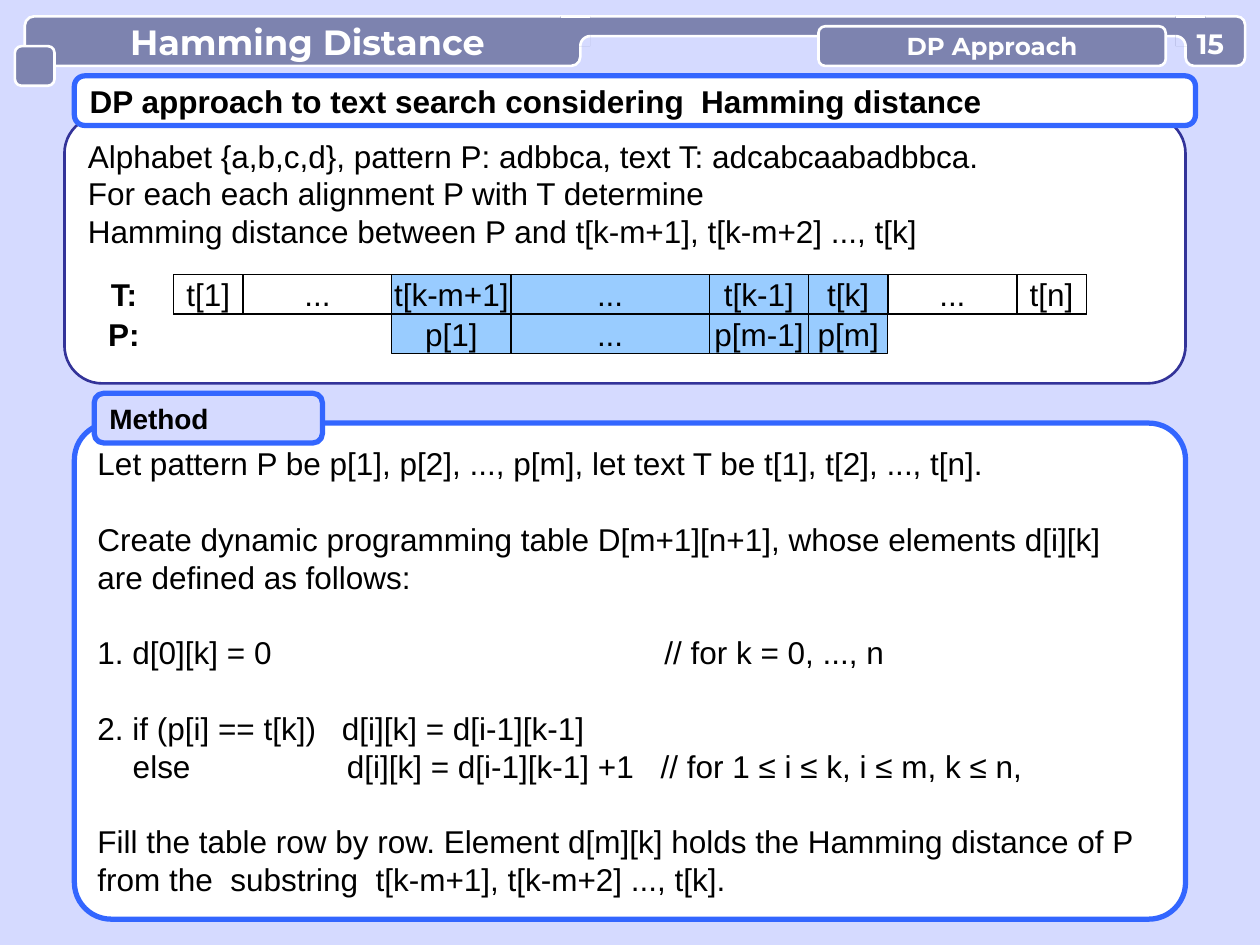
from math import cos, pi, sin

from lxml import etree
from pptx import Presentation
from pptx.dml.color import RGBColor
from pptx.enum.shapes import MSO_CONNECTOR, MSO_SHAPE
from pptx.enum.text import MSO_ANCHOR, PP_ALIGN
from pptx.oxml.ns import qn
from pptx.util import Inches, Mm, Pt

RECT, ROUND = MSO_SHAPE.RECTANGLE, MSO_SHAPE.ROUNDED_RECTANGLE
STRAIGHT = MSO_CONNECTOR.STRAIGHT
LEFT, CENTER = PP_ALIGN.LEFT, PP_ALIGN.CENTER
TOP, MIDDLE = MSO_ANCHOR.TOP, MSO_ANCHOR.MIDDLE

COLORS = {
    "bg": "D5DAFF", "bar": "7D83AF", "white": "FFFFFF", "black": "000000",
    "blue": "3366FF", "navy": "333399", "cell": "99CCFF",
}
LEADING = Pt(21.6)
ROW_OFFSET = 0.3  # the grid has 1 mm steps and starts a little below the top edge


class Deck:
    """Style and current slide; boxes are (column, row, columns, rows)."""

    body, heading = "Arial", "Montserrat"

    def __init__(self):
        self.prs = Presentation()
        self.prs.slide_width, self.prs.slide_height = Inches(10), Inches(7.5)
        self.s = self.prs.slides.add_slide(self.prs.slide_layouts[6])
        self.paint(self.s.background.fill, "bg")

    def paint(self, fill, color):
        if color:
            fill.solid()
            fill.fore_color.rgb = RGBColor.from_string(COLORS[color])
        else:
            fill.background()

    def dress(self, sp, fill, line, width):
        sp.shadow.inherit = False
        self.paint(sp.fill, fill)
        self.paint(sp.line.fill, line)
        if line:
            sp.line.width = Pt(width)

    def place(self, box):
        x, y, w, h = box
        return Mm(x), Mm(y + ROW_OFFSET), Mm(w), Mm(h)

    def shape(self, box, fill=None, line=None, width=1.5, adj=None):
        sp = self.s.shapes.add_shape(RECT if adj is None else ROUND, *self.place(box))
        if adj is not None:
            sp.adjustments[0] = adj
        self.dress(sp, fill, line, width)
        return sp

    def textbox(self, box, text, **style):
        self.put_text(self.s.shapes.add_textbox(*self.place(box)), [text], inset=0, **style)

    def put_text(self, sp, lines, size=18, font=body, color="black", bold=False,
                 align=LEFT, anchor=MIDDLE, inset=None, top=None):
        tf = sp.text_frame
        tf.text = "\n".join(lines)
        tf.word_wrap = True
        tf.vertical_anchor = anchor
        if inset is not None:
            tf.margin_left = tf.margin_right = tf.margin_top = tf.margin_bottom = inset
        if top is not None:
            tf.margin_top = Inches(top)
        for p in tf.paragraphs:
            p.alignment = align
            for r in p.runs:
                r.font.size, r.font.name, r.font.bold = Pt(size), font, bold
                r.font.color.rgb = RGBColor.from_string(COLORS[color])
        return tf

    def tabs(self, p, stops):
        tab_list = etree.SubElement(p._p.get_or_add_pPr(), qn("a:tabLst"))
        for stop in stops:
            etree.SubElement(tab_list, qn("a:tab"), pos=str(Inches(stop)), algn="l")

    def line(self, x1, x2, y):
        y = Mm(y + ROW_OFFSET)
        c = self.s.shapes.add_connector(STRAIGHT, Mm(x1), y, Mm(x2), y)
        self.paint(c.line.fill, "white")
        c.line.width = Pt(1.5)
        etree.SubElement(c._element.spPr, qn("a:effectLst"))

    def outline(self, points, close, fill=None, line=None):
        pts = [(Mm(x), Mm(y + ROW_OFFSET)) for x, y in points]
        fb = self.s.shapes.build_freeform(*pts[0])
        fb.add_line_segments(pts[1:], close=close)
        self.dress(fb.convert_to_shape(), fill, line, 1.5)

    def joint(self, x, center, side):
        """Fillet where the thin bar meets a tab; side is -1 left, 1 right."""
        self.shape((x, 3, 6, 6), "bar")
        self.line(x, x + 6, 3)
        arc = [(center + side * 2 * sin(i * pi / 24), 9 - 2 * cos(i * pi / 24))
               for i in range(13)]
        self.outline(arc + [(center, 9)], True, fill="bg")
        self.outline(arc, False, line="white")


def main():
    d = Deck()

    # Method panel
    sp = d.shape((15, 85, 224, 100), "white", "blue", 3, 0.074)
    tf = d.put_text(sp, [
        "Let pattern P be p[1], p[2], ..., p[m], let text T be t[1], t[2], ..., t[n].",
        "Create dynamic programming table D[m+1][n+1], whose elements d[i][k]",
        "are defined as follows:",
        "1. d[0][k] = 0\t// for k = 0, ..., n",
        "2. if (p[i] == t[k])\td[i][k] = d[i-1][k-1]",
        "\telse\td[i][k] = d[i-1][k-1] +1\t// for 1 ≤ i ≤ k, i ≤ m, k ≤ n,",
        "Fill the table row by row. Element d[m][k] holds the Hamming distance of P",
        "from the  substring  t[k-m+1], t[k-m+2] ..., t[k].",
    ])
    section_starts = (1, 3, 4, 6)
    tab_stops = {3: [4.5], 4: [1.94], 5: [0.28, 1.98, 4.47]}
    for i, p in enumerate(tf.paragraphs):
        p.line_spacing = LEADING
        if i in section_starts:
            p.space_before = LEADING
        if i in tab_stops:
            d.tabs(p, tab_stops[i])

    # Header band
    label = dict(font=d.heading, color="white", bold=True, align=CENTER)
    title = d.shape((5, 3, 112, 10), "bar", "white", adj=0.188)
    d.put_text(title, [" Hamming Distance"], size=20, **label)
    d.shape((117, 3, 124, 4), "bar", "white", adj=0.5)
    d.joint(113, 119, -1)
    d.shape((3, 9, 8, 8), "bar", "white", adj=0.17)
    d.shape((239, 3, 12, 10), "bar", "white", adj=0.17)
    d.joint(237, 237, 1)
    topic = d.shape((165, 5, 70, 8), "bar", "white", adj=0.17)
    d.put_text(topic, ["DP Approach"], size=14, **label)
    d.textbox((239, 5, 10, 7), "15", size=16, **label)

    # Problem panel
    sp = d.shape((13, 23, 226, 54), "white", "navy", adj=0.141)
    tf = d.put_text(sp, [
        "Alphabet {a,b,c,d}, pattern P: adbbca, text T: adcabcaabadbbca.",
        "For each each alignment P with T determine",
        "Hamming distance between P and t[k-m+1], t[k-m+2] ..., t[k]",
    ], anchor=TOP, top=0.08)
    for p in tf.paragraphs:
        p.line_spacing = LEADING

    # Alignment of the text T with the pattern P
    edges = [35, 49, 79, 103, 143, 163, 179, 205, 219]
    rows = {
        "T:": (55, ["t[1]", "...", "t[k-m+1]", "...", "t[k-1]", "t[k]", "...", "t[n]"]),
        "P:": (63, [None, None, "p[1]", "...", "p[m-1]", "p[m]", None, None]),
    }
    for left, right in ((35, 79), (179, 219)):
        d.shape((left, 55, right - left, 8), None, "black", 0.75)
    for name, (y, cells) in rows.items():
        d.textbox((19, y, 12, 8), name, bold=True, align=CENTER)
        for i, text in enumerate(cells):
            if text:
                box = (edges[i], y, edges[i + 1] - edges[i], 8)
                cell = d.shape(box, "cell" if 2 <= i <= 5 else None, "black", 0.75)
                d.put_text(cell, [text], align=CENTER, inset=0)

    # Panel captions
    caption = d.shape((19, 79, 46, 10), "bg", "blue", 3, 0.188)
    d.put_text(caption, ["Method"], size=16, bold=True)
    caption = d.shape((15, 15, 226, 10), "white", "blue", 3, 0.208)
    d.put_text(caption, ["DP approach to text search considering  Hamming distance"], bold=True)

    d.prs.save("out.pptx")


if __name__ == "__main__":
    main()
